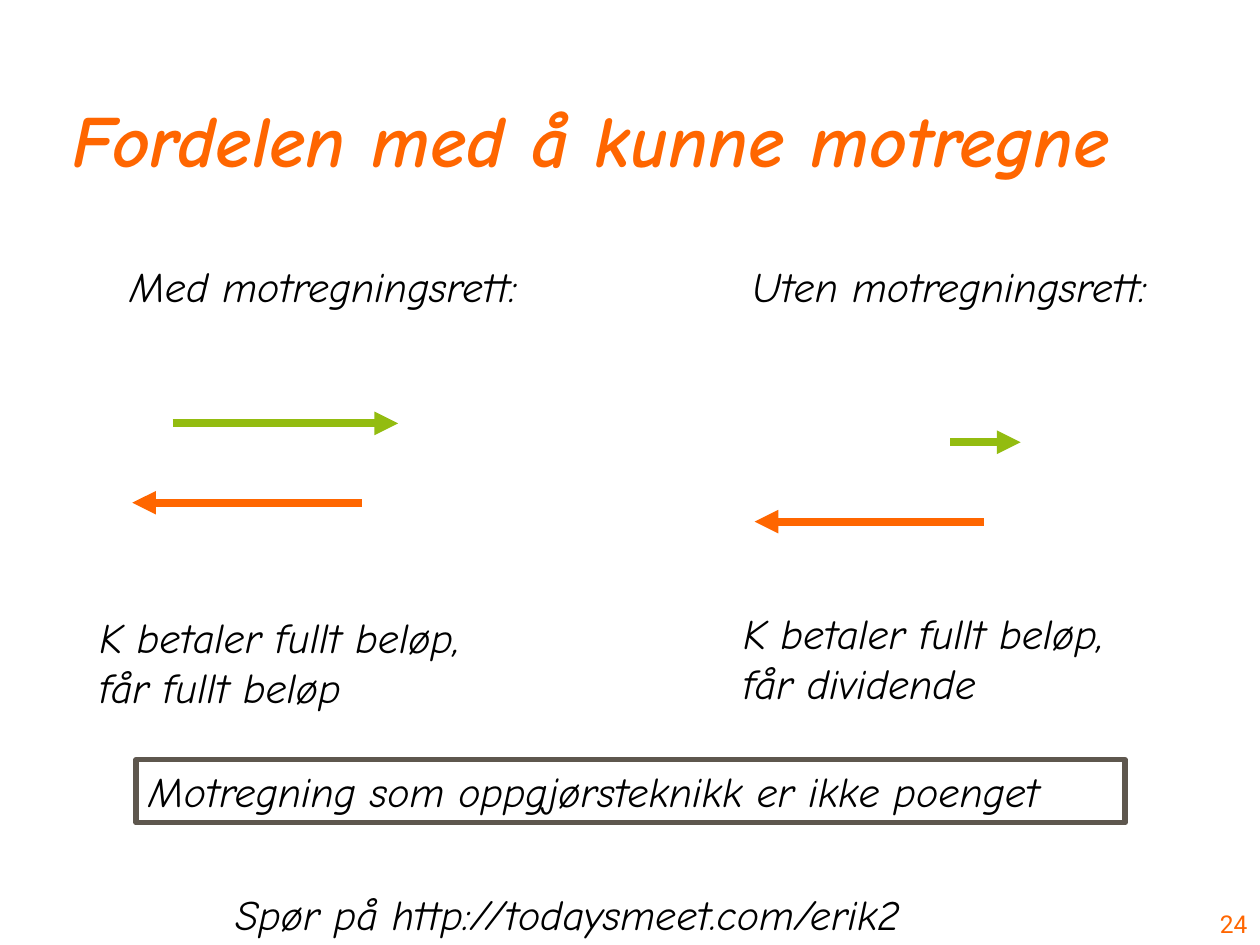
from lxml import etree
from pptx import Presentation
from pptx.dml.color import RGBColor
from pptx.enum import shapes, text
from pptx.oxml import ns
from pptx.util import Inches, Pt

COLORS = {
    "orange": "FF6600",
    "green": "93BC10",
    "frame": "5E574E",
    "text": "000000",
}
HAND_FONT = "Comic Neue"
NUMBER_FONT = "Roboto"


def color(name):
    return RGBColor.from_string(COLORS[name])


def format_text(frame, size, shade, font=HAND_FONT, bold=False, italic=True,
                align=text.PP_ALIGN.LEFT):
    for para in frame.paragraphs:
        para.alignment = align
        for span in para.runs:
            span.font.name = font
            span.font.size = Pt(size)
            span.font.bold = bold
            span.font.italic = italic
            span.font.color.rgb = color(shade)


def set_title(page, wording):
    title = page.shapes.title
    title.left, title.top = Inches(0.44), Inches(0.25)
    title.width, title.height = Inches(8.5), Inches(1.25)
    frame = title.text_frame
    frame.text = wording
    frame.auto_size = text.MSO_AUTO_SIZE.NONE
    frame.vertical_anchor = text.MSO_ANCHOR.BOTTOM
    format_text(frame, 42, "orange", bold=True, align=text.PP_ALIGN.CENTER)


def add_label(page, wording, left, top, width, height=0.5):
    box = page.shapes.add_textbox(
        Inches(left), Inches(top), Inches(width), Inches(height))
    frame = box.text_frame
    frame.text = wording
    frame.word_wrap = False
    frame.auto_size = text.MSO_AUTO_SIZE.SHAPE_TO_FIT_TEXT
    format_text(frame, 24, "text")


def add_arrow(page, left, right, y, shade, arrow_end):
    arrow = page.shapes.add_connector(
        shapes.MSO_CONNECTOR.STRAIGHT,
        Inches(left), Inches(y), Inches(right), Inches(y))
    arrow.line.color.rgb = color(shade)
    arrow.line.width = Pt(4.5)
    line = arrow.line._get_or_add_ln()
    etree.SubElement(line, ns.qn(f"a:{arrow_end}"), type="triangle")
    etree.SubElement(arrow._element.spPr, ns.qn("a:effectLst"))


def add_framed_note(page, wording):
    box = page.shapes.add_shape(
        shapes.MSO_SHAPE.RECTANGLE,
        Inches(1.08), Inches(6.03), Inches(7.85), Inches(0.5))
    box.shadow.inherit = False
    box.fill.background()
    box.line.color.rgb = color("frame")
    box.line.width = Pt(3)
    frame = box.text_frame
    frame.text = wording
    frame.word_wrap = True
    frame.auto_size = text.MSO_AUTO_SIZE.SHAPE_TO_FIT_TEXT
    frame.vertical_anchor = text.MSO_ANCHOR.TOP
    format_text(frame, 24, "text")


def add_page_number(page, number):
    box = page.shapes.add_textbox(
        Inches(9.33), Inches(7), Inches(0.67), Inches(0.5))
    frame = box.text_frame
    frame.text = number
    frame.word_wrap = True
    frame.vertical_anchor = text.MSO_ANCHOR.BOTTOM
    format_text(frame, 14, "orange", font=NUMBER_FONT, italic=False,
                align=text.PP_ALIGN.RIGHT)


def main():
    deck = Presentation()
    deck.slide_width, deck.slide_height = Inches(10), Inches(7.5)
    page = deck.slides.add_slide(deck.slide_layouts[5])

    add_label(page, "Spør på http://todaysmeet.com/erik2", 1.77, 7, 6.17)
    add_page_number(page, "24")
    set_title(page, "Fordelen med å kunne motregne")

    for left, right, y, shade, arrow_end in (
        (1.37, 3.16, 3.36, "green", "tailEnd"),
        (1.05, 2.87, 3.99, "orange", "headEnd"),
        (7.54, 8.1, 3.51, "green", "tailEnd"),
        (5.99, 7.81, 4.14, "orange", "headEnd"),
    ):
        add_arrow(page, left, right, y, shade, arrow_end)

    add_label(page, "K betaler fullt beløp,\vfår fullt beløp", 0.69, 4.8, 3.48, 0.91)
    add_label(page, "K betaler fullt beløp,\vfår dividende", 5.8, 4.77, 3.48, 0.91)
    add_framed_note(page, "Motregning som oppgjørsteknikk er ikke poenget")
    add_label(page, "Med motregningsrett:", 0.93, 2.02, 3.65)
    add_label(page, "Uten motregningsrett:", 5.87, 2.02, 3.74)

    deck.save("out.pptx")


if __name__ == "__main__":
    main()
